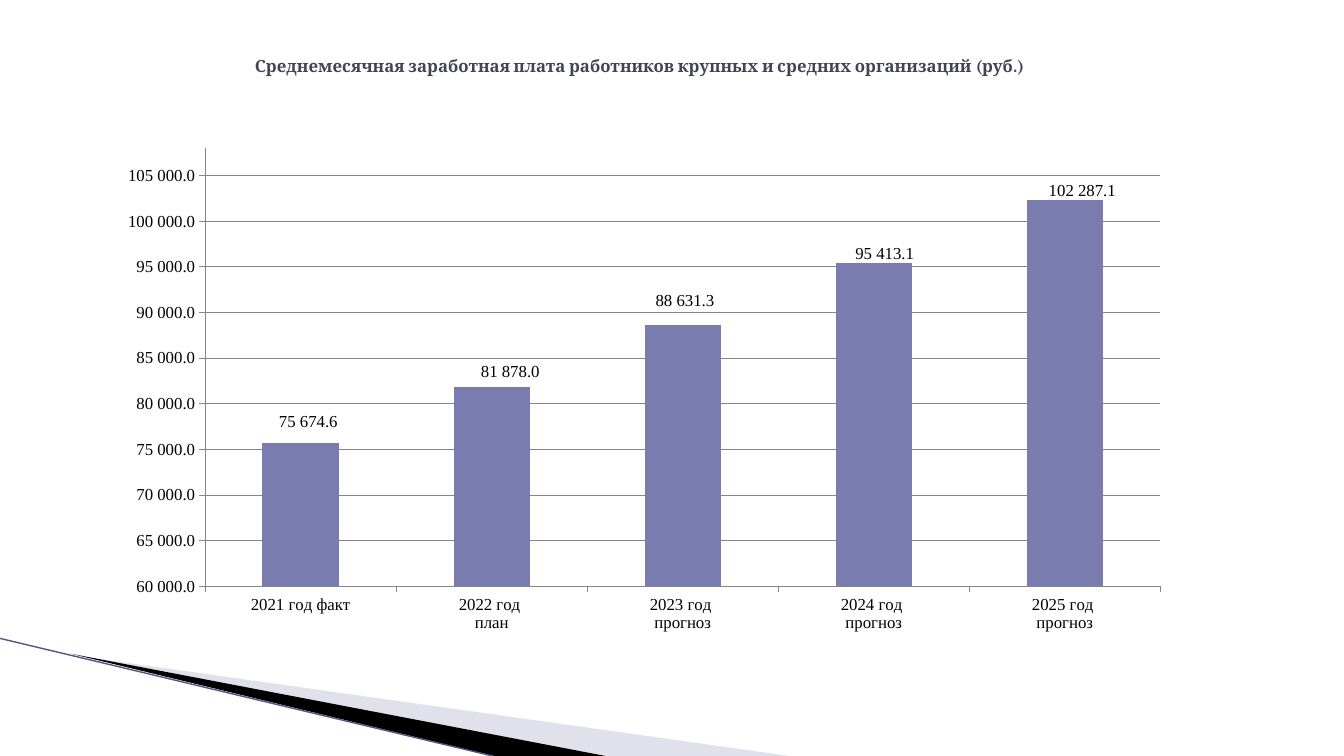
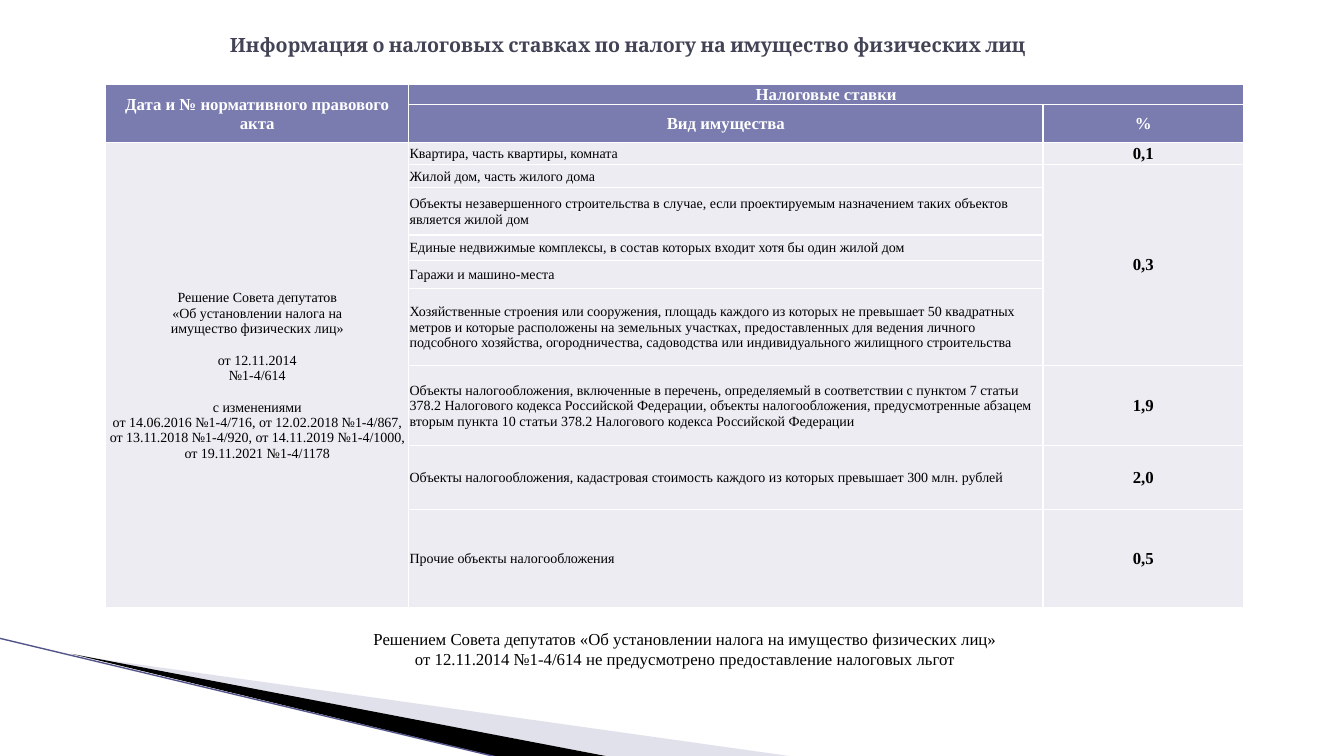
from dataclasses import dataclass
from itertools import product

from lxml import etree
from pptx import Presentation
from pptx.chart import data as chart_data
from pptx.dml.color import RGBColor
from pptx.enum import chart as charts, shapes, text
from pptx.oxml import ns, parse_xml
from pptx.util import Pt

CENTER, LEFT = text.PP_ALIGN.CENTER, text.PP_ALIGN.LEFT
C15 = "http://schemas.microsoft.com/office/drawing/2012/chart"


@dataclass(frozen=True)
class Theme:
    title: str = "424456"
    accent: str = "7A7BAE"
    pale: str = "ECECF2"
    wedge: str = "B6B6D1"
    edge: str = "53548A"
    grid: str = "868686"
    ink: str = "000000"
    paper: str = "FFFFFF"
    title_font: str = "Cambria"
    body_font: str = "Times New Roman"
    heading: int = 14
    normal: int = 12
    small: int = 10


THEME = Theme()


def rgb(code):
    return RGBColor.from_string(code)


def apply(target, values):
    for name, value in values.items():
        setattr(target, name, value)


def set_font(font, size, color=THEME.ink, bold=False, name=THEME.body_font):
    apply(font, {"size": Pt(size), "bold": bold, "name": name})
    font.color.rgb = rgb(color)


def write(frame, lines, align=CENTER, gap_before=(), gap=0, **style):
    """Fill a text frame; lines whose index is in gap_before get extra space."""
    for index, line in enumerate(lines):
        para = frame.add_paragraph() if index else frame.paragraphs[0]
        para.alignment = align
        if index in gap_before:
            para.space_before = Pt(gap)
        span = para.add_run()
        span.text = line
        set_font(span.font, **style)


def chart_xml(tag, inner="", attributes=""):
    return parse_xml(f'<c:{tag} {ns.nsdecls("c")} {attributes}>{inner}</c:{tag}>')


def manual_layout(**values):
    fields = "".join(f'<c:{name} val="{value}"/>' for name, value in values.items())
    return chart_xml("layout", f"<c:manualLayout>{fields}</c:manualLayout>")


def hide_leader_lines(labels):
    for tag in ("c:showLeaderLines", "c:extLst"):
        for old in labels.findall(ns.qn(tag)):
            labels.remove(old)
    labels.append(chart_xml("showLeaderLines", attributes='val="0"'))
    labels.append(chart_xml(
        "extLst", '<c:ext uri="{CE6537A1-D6FC-4f65-9D91-7224C49458BB}">'
        f'<c15:showLeaderLines xmlns:c15="{C15}" val="0"/></c:ext>'))


class Slides:
    """The deck, its style and the page being drawn."""

    def __init__(self, theme):
        self.theme = theme
        self.deck = Presentation()
        apply(self.deck, {"slide_width": Pt(960), "slide_height": Pt(540)})
        self.page = None

    def new_page(self, title, box, size, align):
        self.page = self.deck.slides.add_slide(self.deck.slide_layouts[5])
        self.wedge([(52, 468), (571, 541), (438, 541)], self.theme.wedge, 40)
        self.wedge([(51, 467), (438, 541), (357, 541)], self.theme.ink)
        self.line((0, 456), (356, 541))
        holder = self.page.shapes.title
        apply(holder, dict(zip(("left", "top", "width", "height"), map(Pt, box))))
        apply(holder.text_frame, {"word_wrap": True,
                                  "auto_size": text.MSO_AUTO_SIZE.NONE,
                                  "vertical_anchor": text.MSO_ANCHOR.MIDDLE})
        write(holder.text_frame, [title], align, size=size, bold=True,
              color=self.theme.title, name=self.theme.title_font)

    def wedge(self, points, color, opacity=100):
        corners = [(Pt(x), Pt(y)) for x, y in points]
        builder = self.page.shapes.build_freeform(*corners[0])
        builder.add_line_segments(corners[1:])
        shape = builder.convert_to_shape()
        shape.shadow.inherit = False
        shape.line.fill.background()
        shape.fill.solid()
        shape.fill.fore_color.rgb = rgb(color)
        if opacity < 100:
            fill = shape.element.spPr.find(ns.qn("a:solidFill"))
            etree.SubElement(fill[0], ns.qn("a:alpha"), val=str(opacity * 1000))

    def line(self, start, end):
        line = self.page.shapes.add_connector(
            shapes.MSO_CONNECTOR.STRAIGHT, *map(Pt, start + end))
        line.line.width = Pt(1)
        line.line.color.rgb = rgb(self.theme.edge)
        etree.SubElement(line.element.spPr, ns.qn("a:effectLst"))

    def text_box(self, lines, box):
        frame = self.page.shapes.add_textbox(*map(Pt, box)).text_frame
        frame.word_wrap = True
        write(frame, lines, size=self.theme.normal)

    def column_chart(self, points, box, plot_area, scale, number_format):
        """Points are (category, value, label shift right, label gap above)."""
        source = chart_data.CategoryChartData(number_format=number_format)
        source.categories = [point[0] for point in points]
        source.add_series("Series 1", [point[1] for point in points])
        chart = self.page.shapes.add_chart(
            charts.XL_CHART_TYPE.COLUMN_STACKED, *map(Pt, box), source).chart
        apply(chart, {"has_legend": False, "has_title": False})
        set_font(chart.font, self.theme.normal)
        x, y, w, h = plot_area
        area = chart._chartSpace.chart.plotArea
        for old in area.findall(ns.qn("c:layout")):
            area.remove(old)
        area.insert(0, manual_layout(layoutTarget="inner", xMode="edge",
                                     yMode="edge", x=x, y=y, w=w, h=h))
        low, high, step = scale
        apply(chart.value_axis, {"minimum_scale": low, "maximum_scale": high,
                                 "major_unit": step, "has_major_gridlines": True})
        apply(chart.value_axis.tick_labels, {"number_format": number_format,
                                             "number_format_is_linked": False})
        for axis in (chart.value_axis, chart.category_axis):
            axis.major_tick_mark = charts.XL_TICK_MARK.OUTSIDE
            axis.format.line.color.rgb = rgb(self.theme.grid)
            set_font(axis.tick_labels.font, self.theme.normal)
        gridlines = chart.value_axis.major_gridlines
        gridlines.format.line.color.rgb = rgb(self.theme.grid)
        plot = chart.plots[0]
        apply(plot, {"gap_width": 150, "overlap": 100, "vary_by_categories": False})
        series = plot.series[0]
        series.format.fill.solid()
        series.format.fill.fore_color.rgb = rgb(self.theme.accent)
        for index in range(len(points)):
            label = series.points[index].data_label
            set_font(label.font, self.theme.normal)
            label.position = charts.XL_LABEL_POSITION.CENTER
        tags = chart._chartSpace.iter(ns.qn("c:dLbl"))
        for tag, (_, value, shift, gap) in zip(list(tags), points):
            rise = (value - low) / (high - low) * h / 2 + gap
            mark = tag.find(ns.qn("c:idx"))
            code = f'formatCode="{number_format}" sourceLinked="0"'
            mark.addnext(chart_xml("numFmt", attributes=code))
            mark.addnext(manual_layout(x=shift, y=round(-rise, 4)))
        for labels in list(chart._chartSpace.iter(ns.qn("c:dLbls"))):
            hide_leader_lines(labels)

    def table(self, corner, widths, heights):
        table = self.page.shapes.add_table(
            len(heights), len(widths), *map(Pt, corner),
            Pt(sum(widths)), Pt(sum(heights))).table
        apply(table, {"first_row": False, "horz_banding": False})
        for column, width in zip(table.columns, widths):
            column.width = Pt(width)
        for row, height in zip(table.rows, heights):
            row.height = Pt(height)
        for row, column in product(range(len(heights)), range(len(widths))):
            self.style_cell(table.cell(row, column), row < 2)
        return table

    def style_cell(self, cell, is_header):
        apply(cell, {"margin_left": Pt(0.7), "margin_right": Pt(0.7),
                     "margin_top": Pt(0.7), "margin_bottom": 0,
                     "vertical_anchor": text.MSO_ANCHOR.MIDDLE})
        cell.fill.solid()
        cell.fill.fore_color.rgb = rgb(
            self.theme.accent if is_header else self.theme.pale)
        properties = cell._tc.get_or_add_tcPr()
        for place, side in enumerate("LRTB"):
            properties.insert(place, parse_xml(
                f'<a:ln{side} {ns.nsdecls("a")} w="{Pt(1)}"><a:solidFill>'
                f'<a:srgbClr val="{self.theme.paper}"/></a:solidFill></a:ln{side}>'))


def add_wages_page(slides):
    slides.new_page("Среднемесячная заработная плата работников крупных "
                    "и средних организаций (руб.)",
                    (117, 26, 680, 42), THEME.normal, CENTER)
    slides.column_chart(
        [("2021 год факт", 75674.6, 0.007, 0.04),
         ("2022 год \nплан", 81878, 0.017, 0.027),
         ("2023 год \nпрогноз", 88631.3, 0.002, 0.044),
         ("2024 год \nпрогноз", 95413.1, 0.01, 0.018),
         ("2025 год \nпрогноз", 102287.1, 0.016, 0.018)],
        (60.5, 69, 782.5, 394), (0.11, 0.094, 0.872, 0.794),
        (60000, 108000, 5000), r"#\ ##0.0")


DECISION = [
    "Решение Совета депутатов", "«Об установлении налога на",
    "имущество физических лиц»", "от 12.11.2014", "№1-4/614", "с изменениями",
    "от 14.06.2016 №1-4/716, от 12.02.2018 №1-4/867, от 13.11.2018 №1-4/920, "
    "от 14.11.2019 №1-4/1000, от 19.11.2021 №1-4/1178"]

RATES = [
    ("0,1", ["Квартира, часть квартиры, комната"]),
    ("0,3", [
        "Жилой дом, часть жилого дома",
        "Объекты незавершенного строительства в случае, если проектируемым "
        "назначением таких объектов является жилой дом",
        "Единые недвижимые комплексы, в состав которых входит хотя бы один жилой дом",
        "Гаражи и машино-места",
        "Хозяйственные строения или сооружения, площадь каждого из которых не "
        "превышает 50 квадратных метров и которые расположены на земельных "
        "участках, предоставленных для ведения личного подсобного хозяйства, "
        "огородничества, садоводства или индивидуального жилищного строительства"]),
    ("1,9", [
        "Объекты налогообложения, включенные в перечень, определяемый в "
        "соответствии с пунктом 7 статьи 378.2 Налогового кодекса Российской "
        "Федерации, объекты налогообложения, предусмотренные абзацем вторым "
        "пункта 10 статьи 378.2 Налогового кодекса Российской Федерации"]),
    ("2,0", ["Объекты налогообложения, кадастровая стоимость каждого из "
             "которых превышает 300 млн. рублей"]),
    ("0,5", ["Прочие объекты налогообложения"])]


def add_tax_page(slides):
    slides.new_page("Информация о налоговых ставках по налогу на имущество "
                    "физических лиц", (157, 15, 648, 34), THEME.heading, LEFT)
    table = slides.table(
        (75.5, 60.5), (216.5, 453, 143.5),
        (13, 27, 15.5, 16.5, 34, 18, 20.5, 54.5, 57.5, 45.5, 70.5))
    for first, last in (((0, 0), (1, 0)), ((0, 1), (0, 2)), ((2, 0), (10, 0))):
        table.cell(*first).merge(table.cell(*last))
    headers = {(0, 0): "Дата и № нормативного правового акта",
               (0, 1): "Налоговые ставки", (1, 1): "Вид имущества", (1, 2): "%"}
    for place, header in headers.items():
        write(table.cell(*place).text_frame, [header], size=THEME.normal,
              color=THEME.paper, bold=True)
    write(table.cell(2, 0).text_frame, DECISION, gap_before=(3, 5), gap=11.5,
          size=THEME.small)
    row = 2
    for rate, kinds in RATES:
        rate_cell = table.cell(row, 2)
        if len(kinds) > 1:
            rate_cell.merge(table.cell(row + len(kinds) - 1, 2))
        write(rate_cell.text_frame, [rate], size=THEME.normal, bold=True)
        for kind in kinds:
            write(table.cell(row, 1).text_frame, [kind], LEFT, size=THEME.small)
            row += 1
    slides.text_box(
        ["Решением Совета депутатов «Об установлении налога на имущество "
         "физических лиц»",
         "от 12.11.2014 №1-4/614 не предусмотрено предоставление налоговых льгот"],
        (224, 445.5, 531, 51))


def main():
    slides = Slides(THEME)
    add_wages_page(slides)
    add_tax_page(slides)
    slides.deck.save("out.pptx")


if __name__ == "__main__":
    main()
